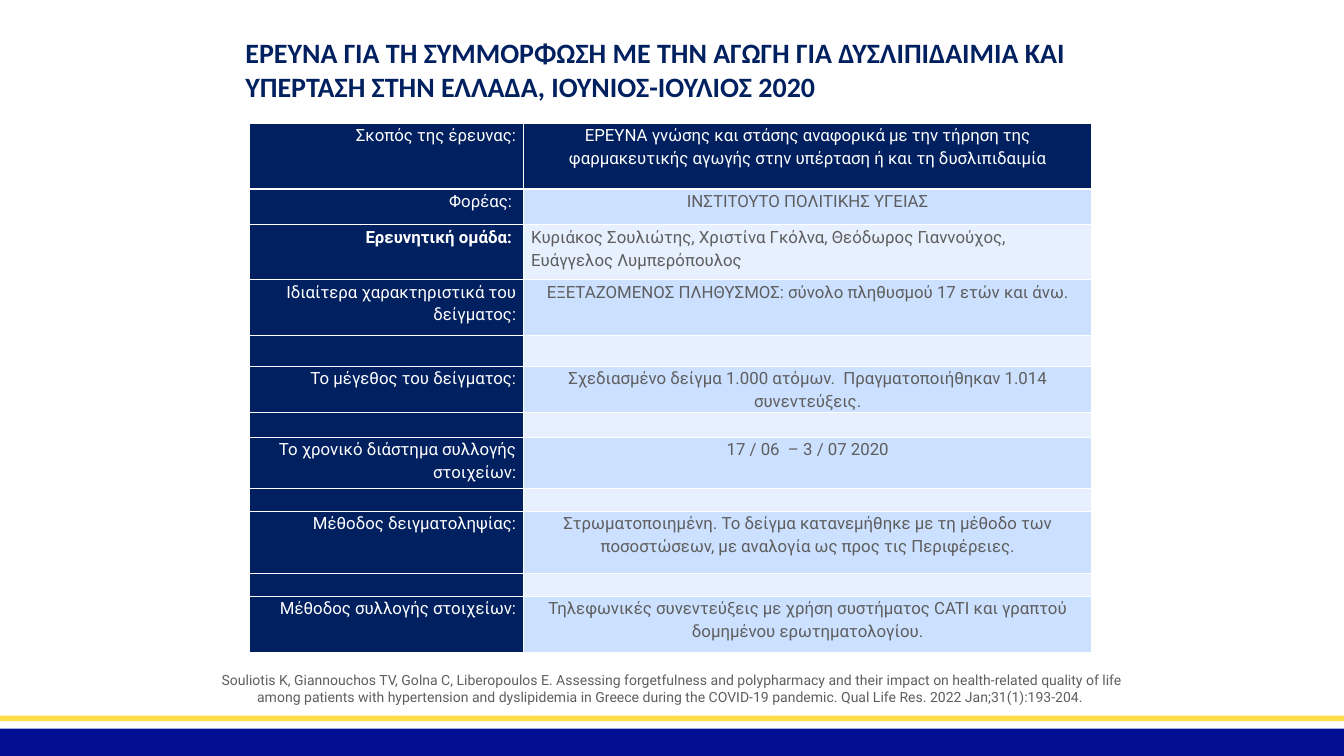
from lxml.etree import SubElement
from pptx import Presentation
from pptx.dml.color import RGBColor
from pptx.enum.shapes import MSO_SHAPE
from pptx.enum.text import MSO_ANCHOR, MSO_AUTO_SIZE, PP_ALIGN
from pptx.oxml.ns import qn
from pptx.util import Pt

NAVY = RGBColor(0x00, 0x20, 0x60)
BLUE = RGBColor(0x02, 0x0F, 0x94)
YELLOW = RGBColor(0xFF, 0xDD, 0x47)
WHITE = RGBColor(0xFF, 0xFF, 0xFF)
GRAY = RGBColor(0x5E, 0x5E, 0x5E)
BAND_DARK = RGBColor(0xCC, 0xE0, 0xFF)
BAND_LIGHT = RGBColor(0xE7, 0xF0, 0xFF)

WIDTH, HEIGHT = 1920, 1080

TITLE = ("ΕΡΕΥΝΑ ΓΙΑ ΤΗ ΣΥΜΜΟΡΦΩΣΗ ΜΕ ΤΗΝ ΑΓΩΓΗ ΓΙΑ ΔΥΣΛΙΠΙΔΑΙΜΙΑ ΚΑΙ "
         "ΥΠΕΡΤΑΣΗ ΣΤΗΝ ΕΛΛΑΔΑ, ΙΟΥΝΙΟΣ-ΙΟΥΛΙΟΣ 2020")
CITATION = ("Souliotis K, Giannouchos TV, Golna C, Liberopoulos E. Assessing "
            "forgetfulness and polypharmacy and their impact on health-related "
            "quality of life among patients with hypertension and dyslipidemia in "
            "Greece during the COVID-19 pandemic. Qual Life Res. 2022 "
            "Jan;31(1):193-204. ")
COLUMNS = (391.7, 811.4)
ROWS = (
    (94.3, "Σκοπός της έρευνας:",
     "ΕΡΕΥΝΑ γνώσης και στάσης αναφορικά με την τήρηση της φαρμακευτικής "
     "αγωγής στην υπέρταση ή και τη δυσλιπιδαιμία"),
    (51.1, "Φορέας: ", "ΙΝΣΤΙΤΟΥΤΟ ΠΟΛΙΤΙΚΗΣ ΥΓΕΙΑΣ"),
    (78.5, "Ερευνητική ομάδα: ",
     "Κυριάκος Σουλιώτης, Χριστίνα Γκόλνα, Θεόδωρος Γιαννούχος, "
     "Ευάγγελος Λυμπερόπουλος"),
    (79.9, "Ιδιαίτερα χαρακτηριστικά του δείγματος:",
     "ΕΞΕΤΑΖΟΜΕΝΟΣ ΠΛΗΘΥΣΜΟΣ: σύνολο πληθυσμού 17 ετών και άνω."),
    (43.2, "", ""),
    (66.2, "Το μέγεθος του δείγματος:",
     "Σχεδιασμένο δείγμα 1.000 ατόμων.  Πραγματοποιήθηκαν 1.014 συνεντεύξεις."),
    (35.3, "", ""),
    (73.4, "Το χρονικό διάστημα συλλογής στοιχείων:", "17 / 06  – 3 / 07 2020"),
    (33.1, "", ""),
    (87.8, "Μέθοδος δειγματοληψίας:",
     "Στρωματοποιημένη. Το δείγμα κατανεμήθηκε με τη μέθοδο των ποσοστώσεων, "
     "με αναλογία ως προς τις Περιφέρειες."),
    (33.1, "", ""),
    (79.9, "Μέθοδος συλλογής στοιχείων:",
     "Τηλεφωνικές συνεντεύξεις με χρήση συστήματος CATI και γραπτού "
     "δομημένου ερωτηματολογίου."),
)
TEAM_ROW = 2


class SlideBuilder:
    font = "Roboto"
    title_font = "Calibri"

    def __init__(self, prs):
        self.s = prs.slides.add_slide(prs.slide_layouts[5])

    def add_run(self, tf, text, size, color, align, font=None, bold=False, spacing=1.0):
        p = tf.paragraphs[0]
        p.alignment = align
        p.line_spacing = spacing
        r = p.add_run()
        r.text = text
        r.font.name = font or self.font
        r.font.size = Pt(size)
        r.font.bold = bold
        r.font.color.rgb = color

    def title(self, x, y, w, h, text):
        sp = self.s.shapes.title
        sp.left, sp.top, sp.width, sp.height = Pt(x), Pt(y), Pt(w), Pt(h)
        tf = sp.text_frame
        tf.word_wrap = True
        tf.auto_size = MSO_AUTO_SIZE.NONE
        tf.vertical_anchor = MSO_ANCHOR.MIDDLE
        tf.margin_left = tf.margin_right = Pt(14.4)
        tf.margin_top = tf.margin_bottom = Pt(7.2)
        self.add_run(tf, text, 40, NAVY, PP_ALIGN.LEFT, self.title_font, True)

    def bar(self, y, h, color):
        sp = self.s.shapes.add_shape(MSO_SHAPE.RECTANGLE, 0, Pt(y), Pt(WIDTH), Pt(h))
        sp.shadow.inherit = False
        sp.fill.solid()
        sp.fill.fore_color.rgb = color
        sp.line.fill.background()

    def text(self, x, y, w, h, text):
        sp = self.s.shapes.add_textbox(Pt(x), Pt(y), Pt(w), Pt(h))
        tf = sp.text_frame
        tf.word_wrap = True
        tf.auto_size = MSO_AUTO_SIZE.SHAPE_TO_FIT_TEXT
        self.add_run(tf, text, 20, GRAY, PP_ALIGN.CENTER)

    def cell(self, cell, text, fill, color, align, bold, bottom):
        cell.margin_left = cell.margin_right = Pt(10.8)
        cell.margin_top = cell.margin_bottom = 0
        tcPr = cell._tc.get_or_add_tcPr()
        for side, width in (("L", 1), ("R", 1), ("T", 1), ("B", bottom)):
            ln = SubElement(tcPr, qn(f"a:ln{side}"), w=str(Pt(width)))
            SubElement(SubElement(ln, qn("a:solidFill")), qn("a:srgbClr"), val=str(WHITE))
        cell.fill.solid()
        cell.fill.fore_color.rgb = fill
        if text:
            self.add_run(cell.text_frame, text, 24, color, align, bold=bold, spacing=1.15)

    def table(self, x, y, columns, rows):
        height = sum(row[0] for row in rows)
        table = self.s.shapes.add_table(len(rows), len(columns), Pt(x), Pt(y),
                                        Pt(sum(columns)), Pt(height)).table
        table.first_row = table.horz_banding = False
        for column, width in zip(table.columns, columns):
            column.width = Pt(width)
        for i, (row_height, label, value) in enumerate(rows):
            table.rows[i].height = Pt(row_height)
            bottom = 3 if i == 0 else 1
            band = NAVY if i == 0 else BAND_DARK if i % 2 else BAND_LIGHT
            color = WHITE if i == 0 else GRAY
            align = PP_ALIGN.LEFT if i == TEAM_ROW else PP_ALIGN.CENTER
            self.cell(table.cell(i, 0), label, NAVY, WHITE, PP_ALIGN.RIGHT,
                      i == TEAM_ROW, bottom)
            self.cell(table.cell(i, 1), value, band, color, align, False, bottom)


def main():
    prs = Presentation()
    prs.slide_width, prs.slide_height = Pt(WIDTH), Pt(HEIGHT)
    slide = SlideBuilder(prs)
    slide.table(356.4, 175.7, COLUMNS, ROWS)
    slide.title(336.2, 51.1, 1275.1, 95, TITLE)
    slide.bar(1041, 39, BLUE)
    slide.bar(1022.4, 8, YELLOW)
    slide.text(299.5, 955.4, 1321.2, 55.4, CITATION)
    prs.save("out.pptx")


if __name__ == "__main__":
    main()
